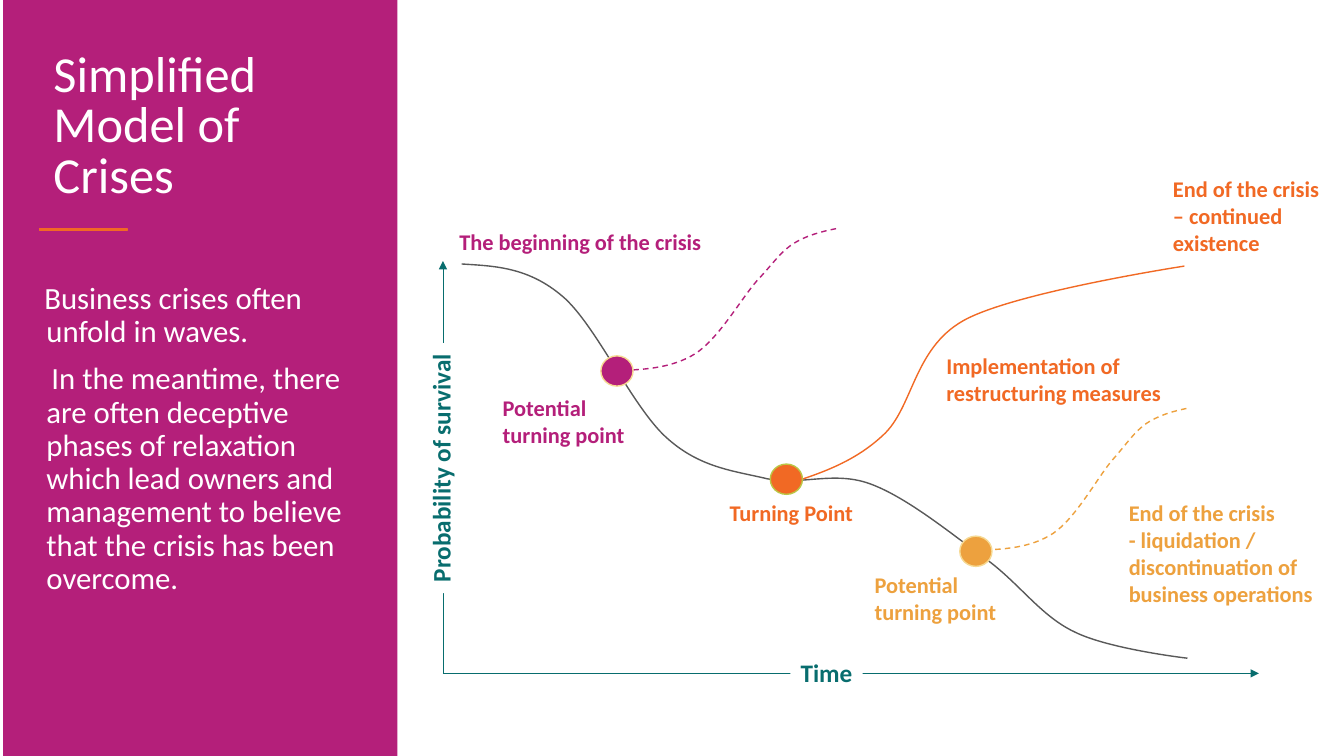
from lxml.etree import SubElement
from pptx import Presentation
from pptx.dml.color import RGBColor
from pptx.enum.dml import MSO_LINE
from pptx.enum.shapes import MSO_CONNECTOR, MSO_SHAPE
from pptx.enum.text import MSO_ANCHOR, MSO_AUTO_SIZE, PP_ALIGN
from pptx.oxml.ns import qn
from pptx.util import Pt

MAGENTA, ORANGE, GOLD, TEAL = "B41F7A", "F16924", "EDA13E", "086D6E"
WHITE, GREY, CREAM, LIME = "FFFFFF", "595959", "F6D992", "BBC646"

DECLINE = [
    (329.8, 188.6), (353.5, 190.1), (377.3, 190.8), (401.8, 211.7),
    (425.5, 231.8), (451.4, 290.2), (475.9, 312.5),
    (499.7, 334.1), (523.4, 336.2), (547.9, 342),
    (572.4, 347), (595.4, 336.2), (621.4, 345.6),
    (647.3, 355), (678.2, 380.2), (702.7, 398.2),
    (727.2, 415.4), (743, 439.9), (767.5, 451.4),
    (792, 463.7), (848.2, 470.2), (848.2, 470.2),
]
RESTRUCTURING = [
    (560.9, 346.3), (585.4, 338.4), (609.8, 330.5), (630.7, 311),
    (652.3, 291.6), (652.3, 249.1), (688.3, 229),
    (724.3, 208.8), (846, 190.1), (846, 190.1),
]
RELAXATION = [
    (0, 0), (19.4, -0.7), (38.9, -1.4), (55.4, -12.2),
    (71.3, -23), (86.4, -51.1), (97.2, -64.1),
    (108.7, -77), (112.3, -83.5), (121, -90),
    (130.3, -96.5), (141.1, -99.4), (151.2, -101.5),
]


def colour(value):
    return RGBColor.from_string(value)


class CrisisSlide:
    font = "Calibri"

    def __init__(self, deck):
        self.slide = deck.slides.add_slide(deck.slide_layouts[5])
        self.shapes = self.slide.shapes

    def style(self, paragraph, size, ink, bold=False):
        for run in paragraph.runs:
            run.font.name = self.font
            run.font.size = Pt(size)
            run.font.bold = bold
            run.font.color.rgb = colour(ink)

    def title(self, text, left, top, width, height):
        heading = self.shapes.title
        heading.left, heading.top = Pt(left), Pt(top)
        heading.width, heading.height = Pt(width), Pt(height)
        frame = heading.text_frame
        frame.text = text
        frame.word_wrap = True
        frame.auto_size = MSO_AUTO_SIZE.NONE
        frame.vertical_anchor = MSO_ANCHOR.TOP
        paragraph = frame.paragraphs[0]
        paragraph.alignment = PP_ALIGN.LEFT
        paragraph.line_spacing = Pt(36.2)
        paragraph.space_before = Pt(0)
        self.style(paragraph, 36, WHITE)

    def shape(self, kind, left, top, width, height, fill, outline=None):
        shape = self.shapes.add_shape(kind, Pt(left), Pt(top), Pt(width), Pt(height))
        shape.shadow.inherit = False
        shape.fill.solid()
        shape.fill.fore_color.rgb = colour(fill)
        if outline:
            shape.line.color.rgb = colour(outline)
            shape.line.width = Pt(1)
        else:
            shape.line.fill.background()
        return shape

    def band(self, left, top, width, height):
        panel = self.shape(MSO_SHAPE.RECTANGLE, left, top, width, height, MAGENTA)
        self.shapes.title._element.addprevious(panel._element)

    def body(self, entries, left, top, width, height):
        frame = self.shapes.add_textbox(Pt(left), Pt(top), Pt(width), Pt(height)).text_frame
        frame.word_wrap = True
        frame.text = "\n".join(text for text, _ in entries)
        for index, (paragraph, (_, indent)) in enumerate(zip(frame.paragraphs, entries)):
            properties = paragraph._p.get_or_add_pPr()
            properties.set("marL", str(Pt(1.5)))
            properties.set("indent", str(Pt(indent)))
            paragraph.line_spacing = 0.9
            paragraph.space_before = Pt(10 if index else 0)
            self.style(paragraph, 22, WHITE)

    def label(self, text, left, top, width, height, ink):
        frame = self.shapes.add_textbox(Pt(left), Pt(top), Pt(width), Pt(height)).text_frame
        frame.word_wrap = True
        frame.text = text
        self.style(frame.paragraphs[0], 16, ink, True)

    def axis(self, start, end):
        line = self.shapes.add_connector(MSO_CONNECTOR.STRAIGHT, *map(Pt, start + end))
        line.line.color.rgb = colour(TEAL)
        line.line.width = Pt(0.5)
        SubElement(line.line._get_or_add_ln(), qn("a:tailEnd"), type="triangle")
        SubElement(line._element.spPr, qn("a:effectLst"))

    def axis_name(self, text, left, top, width, rotation=0):
        plate = self.shape(MSO_SHAPE.RECTANGLE, left, top, width, 28.8, WHITE)
        plate.rotation = rotation
        frame = plate.text_frame
        frame.word_wrap = False
        frame.text = text
        frame.paragraphs[0].alignment = PP_ALIGN.CENTER
        self.style(frame.paragraphs[0], 18, TEAL, True)

    def curve(self, controls, ink, dashed=False):
        start, *others = [(Pt(x), Pt(y)) for x, y in controls]
        builder = self.shapes.build_freeform(*start)
        builder.add_line_segments(others, close=False)
        trend = builder.convert_to_shape()
        segments = list(trend._element.iter(qn("a:lnTo")))
        for first in range(0, len(segments), 3):
            bend = SubElement(segments[first].getparent(), qn("a:cubicBezTo"))
            for segment in segments[first:first + 3]:
                bend.append(segment[0])
                segment.getparent().remove(segment)
        trend.shadow.inherit = False
        trend.fill.background()
        trend.line.color.rgb = colour(ink)
        trend.line.width = Pt(1)
        if dashed:
            trend.line.dash_style = MSO_LINE.DASH

    def relaxation(self, left, top, stretch, ink):
        self.curve([(left + x * stretch, top + y) for x, y in RELAXATION], ink, True)

    def point(self, left, top, fill, outline):
        self.shape(MSO_SHAPE.OVAL, left, top, 23, 21.6, fill, outline)


def main():
    deck = Presentation()
    deck.slide_width, deck.slide_height = Pt(960), Pt(540)
    crisis = CrisisSlide(deck)

    crisis.band(2.3, 0, 281.5, 540)
    crisis.title("Simplified Model of Crises", 31, 33.3, 225, 163.4)
    crisis.shape(MSO_SHAPE.RECTANGLE, 28.1, 163.4, 62.6, 1.4, ORANGE, ORANGE)
    crisis.body([
        ("Business crises often unfold in waves.", -1.5),
        ("In the meantime, there are often deceptive phases of relaxation which lead "
         "owners and management to believe that the crisis has been overcome.", 3.6),
    ], 24.6, 198.4, 230.4, 275)

    origin = (316.4, 481)
    crisis.axis(origin, (316.4, 186.5))
    crisis.axis(origin, (899.3, 481))

    for label in (
        ("Turning Point", 514, 352.8, 110, 26.6, ORANGE),
        ("End of the crisis – continued existence", 830.8, 121.7, 126.7, 65.5, ORANGE),
        ("End of the crisis\v- liquidation /\vdiscontinuation of\vbusiness operations",
         799.2, 353.1, 152, 84, GOLD),
        ("The beginning of the crisis", 321, 159.1, 192, 26.6, MAGENTA),
        ("Potential\vturning point", 617.6, 404.6, 106, 46, GOLD),
        ("Implementation of\vrestructuring measures", 668.9, 248, 172, 46, ORANGE),
        ("Potential\vturning point", 352, 278.2, 106, 46, MAGENTA),
    ):
        crisis.label(*label)

    crisis.axis_name("Time", 564.5, 465.8, 51.8)
    crisis.axis_name("Probability of survival", 225.4, 320, 178.6, 270)

    crisis.curve(DECLINE, GREY)
    crisis.curve(RESTRUCTURING, ORANGE)
    crisis.relaxation(697, 393.1, 1, GOLD)
    crisis.relaxation(438.5, 264.8, 1.05, MAGENTA)

    for point in (
        (429.2, 254.2, MAGENTA, CREAM),
        (550.2, 331.5, ORANGE, LIME),
        (685.6, 383, GOLD, CREAM),
    ):
        crisis.point(*point)

    deck.save("out.pptx")


if __name__ == "__main__":
    main()
